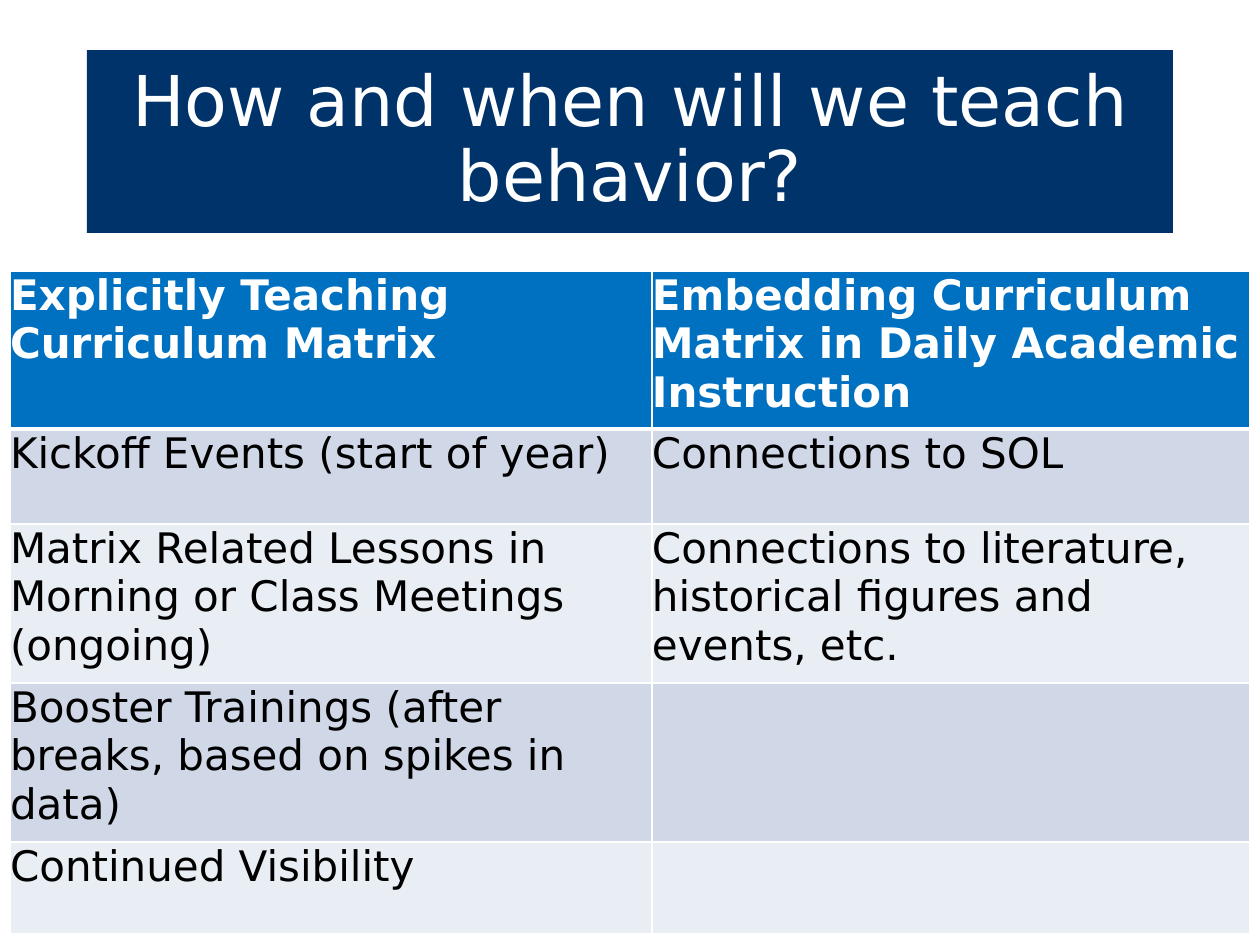
from lxml import etree
from pptx import Presentation
from pptx import util as u
from pptx.dml.color import RGBColor
from pptx.enum import shapes, text
from pptx.oxml.ns import qn

PX = 914400 / 126
NAVY = RGBColor(0x00, 0x33, 0x69)
BLUE = RGBColor(0x00, 0x70, 0xC0)
BAND_DARK = RGBColor(0xD0, 0xD8, 0xE8)
BAND_LIGHT = RGBColor(0xE9, 0xED, 0xF4)
WHITE = RGBColor(0xFF, 0xFF, 0xFF)
BLACK = RGBColor(0x00, 0x00, 0x00)
FONT = "DejaVu Sans"


def px(*lengths):
    """Turn pixel lengths into EMU."""
    return [u.Emu(round(length * PX)) for length in lengths]


def add_border(cell, side, points):
    """Draw one white cell border; call before the cell gets its fill."""
    line = etree.SubElement(cell._tc.get_or_add_tcPr(), qn("a:" + side), w=str(u.Pt(points)))
    fill = etree.SubElement(line, qn("a:solidFill"))
    etree.SubElement(fill, qn("a:srgbClr"), val=str(WHITE))


prs = Presentation()
prs.slide_width, prs.slide_height = px(1260, 945)
slide = prs.slides.add_slide(prs.slide_layouts[6])

# Title banner
banner = slide.shapes.add_shape(shapes.MSO_SHAPE.RECTANGLE, *px(87, 50, 1086, 183))
banner.shadow.inherit = False
banner.fill.solid()
banner.fill.fore_color.rgb = NAVY
banner.line.fill.background()
banner.text_frame.word_wrap = True
banner.text_frame.vertical_anchor = text.MSO_ANCHOR.MIDDLE
heading = banner.text_frame.paragraphs[0]
heading.alignment = text.PP_ALIGN.CENTER
heading.line_spacing = 0.9
title = heading.add_run()
title.text = "How and when will we teach behavior?"
for name, value in {"name": FONT, "size": u.Pt(40)}.items():
    setattr(title.font, name, value)
title.font.color.rgb = WHITE

# Teaching methods table
methods = [
    ("Explicitly Teaching Curriculum Matrix",
     "Embedding Curriculum Matrix in Daily Academic Instruction"),
    ("Kickoff Events (start of year)", "Connections to SOL"),
    ("Matrix Related Lessons in Morning or Class Meetings (ongoing)",
     "Connections to literature, historical figures and events, etc."),
    ("Booster Trainings (after breaks, based on spikes in data)", ""),
    ("Continued Visibility", ""),
]
col_widths = [642, 598]
row_heights = [158, 95, 159, 159, 92]
grid = slide.shapes.add_table(
    len(methods), len(col_widths), *px(10, 271, sum(col_widths), sum(row_heights))).table
for column, width in zip(grid.columns, px(*col_widths)):
    column.width = width
for row, height in zip(grid.rows, px(*row_heights)):
    row.height = height

for r, entries in enumerate(methods):
    is_header = r == 0
    row_fill = BLUE if is_header else (BAND_LIGHT, BAND_DARK)[r % 2]
    for c, entry in enumerate(entries):
        cell = grid.cell(r, c)
        for side in ("left", "right", "top", "bottom"):
            setattr(cell, "margin_" + side, 0)
        borders = {"lnL": 1, "lnR": 1, "lnT": 3 if r == 1 else 1, "lnB": 3 if is_header else 1}
        for side, points in borders.items():
            add_border(cell, side, points)
        cell.fill.solid()
        cell.fill.fore_color.rgb = row_fill
        if entry:
            run = cell.text_frame.paragraphs[0].add_run()
            run.text = entry
            for name, value in {"name": FONT, "size": u.Pt(24), "bold": is_header}.items():
                setattr(run.font, name, value)
            run.font.color.rgb = WHITE if is_header else BLACK

prs.save("out.pptx")
